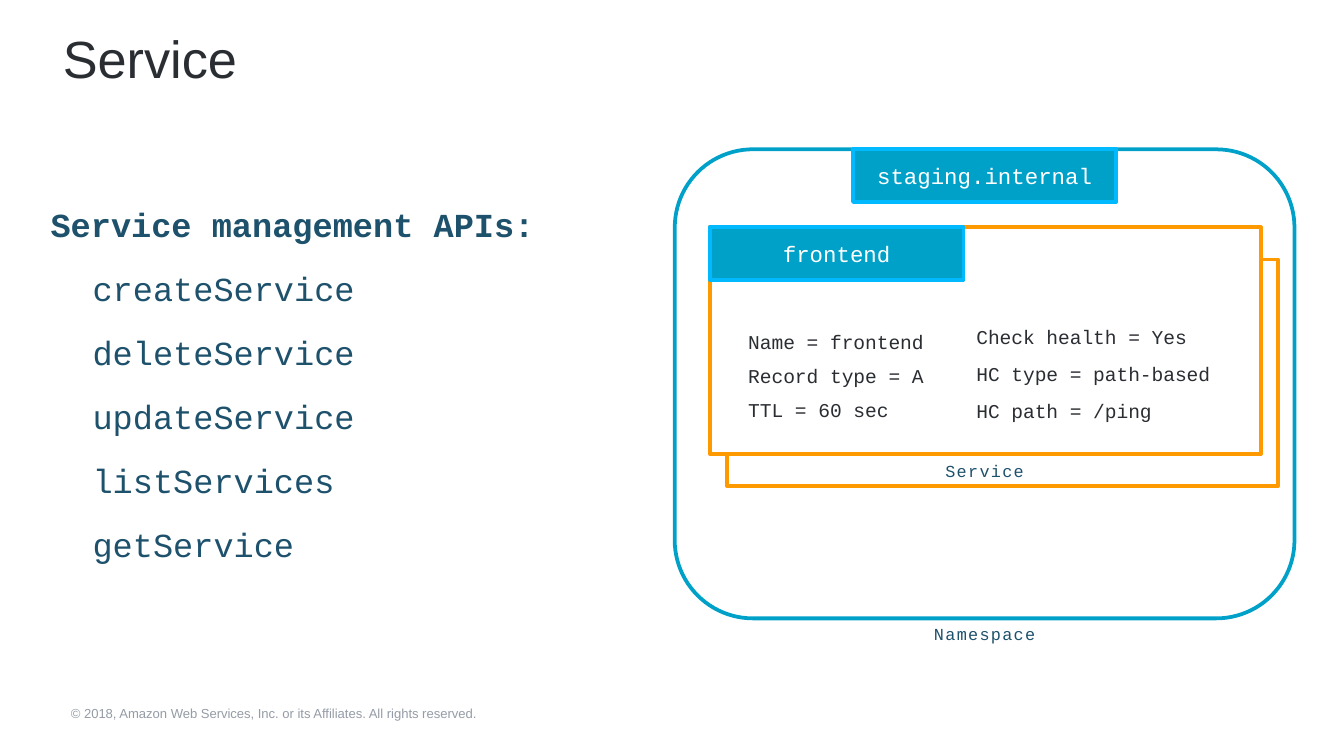
"""Build a slide on service management APIs beside a namespace diagram."""
from pptx import Presentation
from pptx.dml.color import RGBColor
from pptx.enum.shapes import MSO_SHAPE
from pptx.enum.text import MSO_ANCHOR, PP_ALIGN
from pptx.oxml.ns import qn
from pptx.util import Pt
from lxml import etree

WHITE = RGBColor(0xFF, 0xFF, 0xFF)
INK = RGBColor(0x2A, 0x2D, 0x32)
GREY = RGBColor(0x95, 0x9C, 0xA6)
NAVY = RGBColor(0x1D, 0x51, 0x6C)
TEAL = RGBColor(0x00, 0xA1, 0xC9)
SKY = RGBColor(0x00, 0xB9, 0xFF)
ORANGE = RGBColor(0xFF, 0x99, 0x00)
MONO = "Courier New"

deck = Presentation()
deck.slide_width, deck.slide_height = Pt(720), Pt(405)
slide = deck.slides.add_slide(deck.slide_layouts[6])


def add_box(area, fill, line, kind=MSO_SHAPE.RECTANGLE):
    box = slide.shapes.add_shape(kind, *map(Pt, area))
    box.shadow.inherit = False
    box.fill.solid()
    box.fill.fore_color.rgb = fill
    box.line.color.rgb = line
    box.line.width = Pt(2)
    return box


def add_text(area, lines, size, color, font=MONO, inset=(7.2, 3.6), space=None, gap=0):
    frame = slide.shapes.add_textbox(*map(Pt, area)).text_frame
    frame.word_wrap = True
    frame.margin_left = frame.margin_right = Pt(inset[0])
    frame.margin_top = frame.margin_bottom = Pt(inset[1])
    frame.text = "\n".join(lines)
    for i, para in enumerate(frame.paragraphs):
        if space:
            para.line_spacing = space
        if i and gap:
            para.space_before = Pt(gap)
        para.font.size = Pt(size)
        para.font.name = font
        para.font.color.rgb = color
    return frame


add_text((38, 378, 238.5, 9),
         ["© 2018, Amazon Web Services, Inc. or its Affiliates. All rights reserved."],
         7, GREY, "Arial", (0, 0))
title = add_text((26.6, 9.4, 646, 43.2), ["Service"], 28, INK, "Arial")
title.vertical_anchor = MSO_ANCHOR.MIDDLE

add_box((361.5, 80, 332, 251.3), WHITE, TEAL, MSO_SHAPE.ROUNDED_RECTANGLE)
back = add_box((389.5, 139, 295.2, 121.5), WHITE, ORANGE)
tint = back.fill._xPr.find(qn("a:solidFill"))[0]
etree.SubElement(tint, qn("a:alpha")).set("val", "50000")
add_box((380.2, 121.8, 295.2, 121.5), WHITE, ORANGE)

for name, left, top, width in [("staging.internal", 457, 80, 141),
                               ("frontend", 380.2, 121.8, 136)]:
    tab = add_box((left, top, width, 28.2), TEAL, SKY)
    tab.text_frame.text = name
    tab.text_frame.vertical_anchor = MSO_ANCHOR.MIDDLE
    para = tab.text_frame.paragraphs[0]
    para.alignment = PP_ALIGN.CENTER
    para.font.size = Pt(12)
    para.font.name = MONO
    para.font.color.rgb = WHITE

add_text((393.8, 168, 110.2, 59), ["Name = frontend", "Record type = A", "TTL = 60 sec"],
         10.5, INK, space=1.4, gap=0.8)
add_text((516, 164.2, 148.3, 64.8),
         ["Check health = Yes", "HC type = path-based", "HC path = /ping"],
         10.5, INK, space=1.5, gap=0.9)

for name, top in [("Service", 244), ("Namespace", 331.3)]:
    label = add_text((459.5, top, 136, 32), [name], 9, NAVY, inset=(5, 2.9))
    para = label.paragraphs[0]
    para.alignment = PP_ALIGN.CENTER
    para._p.pPr.find(qn("a:defRPr")).set("spc", "70")

calls = ["createService", "deleteService", "updateService", "listServices", "getService"]
menu = add_text((20, 95.2, 360, 203.8), ["Service management APIs:"] + calls,
                18, NAVY, space=1.5, gap=1.8)
menu.paragraphs[0].font.bold = True
for para in menu.paragraphs[1:]:
    para._p.pPr.set("marL", str(Pt(22.5)))

deck.save("out.pptx")
